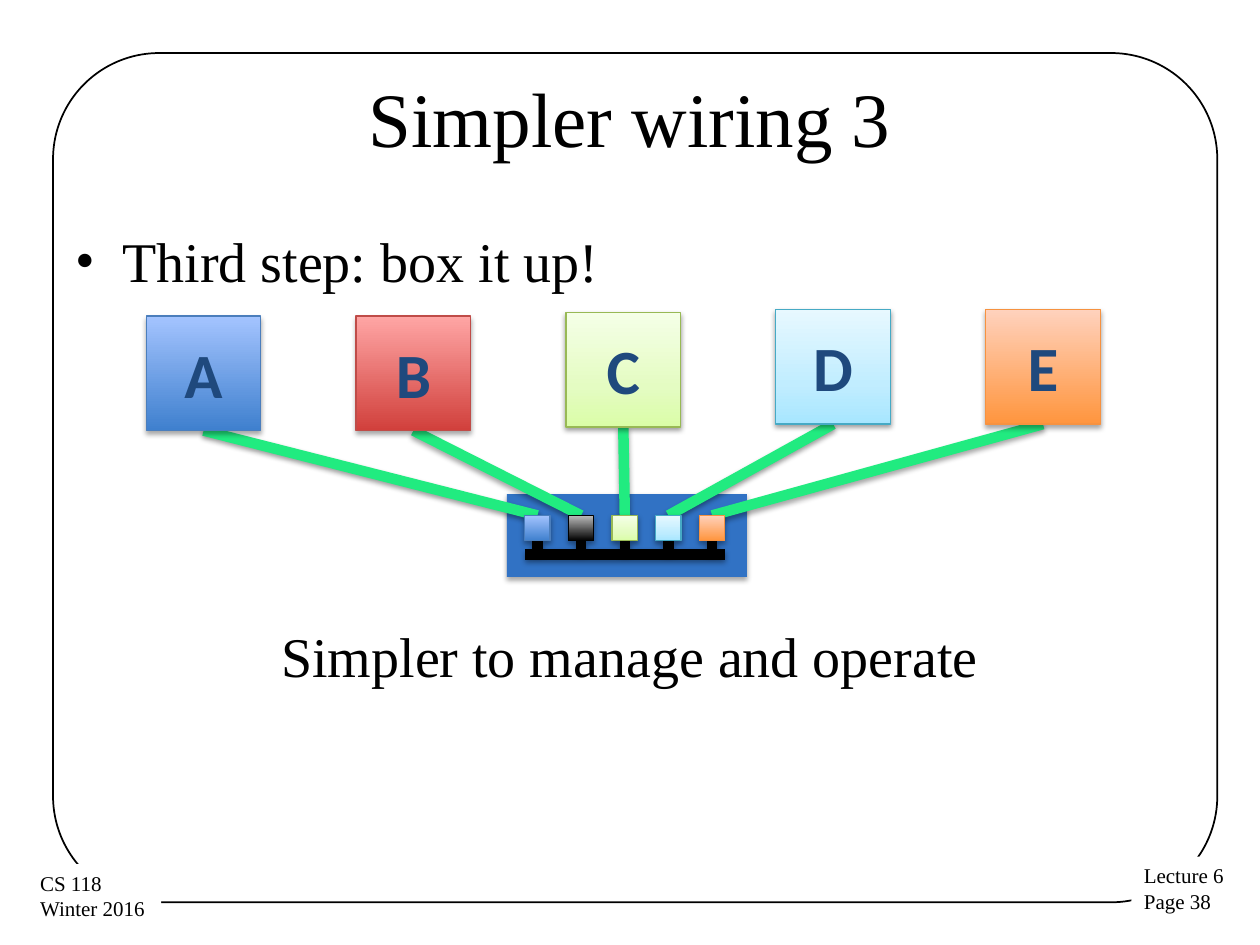
from lxml import etree
from pptx import Presentation
from pptx.dml.color import RGBColor
from pptx.enum.shapes import MSO_CONNECTOR, MSO_SHAPE
from pptx.enum.text import MSO_ANCHOR, MSO_AUTO_SIZE, PP_ALIGN
from pptx.oxml.ns import qn
from pptx.util import Cm, Pt

RECT, ROUND = MSO_SHAPE.RECTANGLE, MSO_SHAPE.ROUNDED_RECTANGLE
STRAIGHT = MSO_CONNECTOR.STRAIGHT
LEFT, CENTER = PP_ALIGN.LEFT, PP_ALIGN.CENTER
TOP, MIDDLE = MSO_ANCHOR.TOP, MSO_ANCHOR.MIDDLE
FIT = MSO_AUTO_SIZE.SHAPE_TO_FIT_TEXT

SERIF, SANS = "Times New Roman", "Calibri"
BLACK, WHITE, NAVY, GREEN, BLUE = "000000", "FFFFFF", "1F497D", "21EB80", "3172C4"

# Shadow: opacity in percent, distance in points
DEEP, SOFT = (35, 1.8), (38, 1.6)

# Look of a host or port: gradient stops from the bottom up, line, shadow
SKY = ([(0, "3F80CE"), (100, "A4C4FF")], "4B7EBC", DEEP)
RED = ([(0, "D1403C"), (100, "FFA6A5")], "BF4C48", DEEP)
GREY = ([(0, BLACK), (100, "BDBDBD")], BLACK, DEEP)
LIME = ([(0, "DAFDA7"), (35, "E4FCC2"), (100, "F5FFE7")], "98B955", SOFT)
AQUA = ([(0, "A7E6FF"), (35, "C1EDFF"), (100, "E7F8FF")], "46AAC5", SOFT)
PEACH = ([(0, "FF953E"), (100, "FFD2BD")], "F69240", DEEP)

# Name, top in cm, host look, port look, cable shadow
HOSTS = [
    ("A", 6.37, SKY, SKY, SOFT),
    ("B", 6.37, RED, GREY, DEEP),
    ("C", 6.30, LIME, LIME, SOFT),
    ("D", 6.24, AQUA, AQUA, SOFT),
    ("E", 6.24, PEACH, PEACH, DEEP),
]
HOST_X, HOST_STEP, HOST_SIZE = 2.95, 4.23, 2.31
PORT_X, PORT_STEP, PORT_SIZE, PORT_Y = 10.58, 0.88, 0.51, 10.39
BAR_Y = 11.18


def rgb(code):
    return RGBColor.from_string(code)


def add_shadow(item, look):
    """Drop a blurred black shadow straight down, or none."""
    props = item._element.spPr
    for old in props.findall(qn("a:effectLst")):
        props.remove(old)
    effects = etree.SubElement(props, qn("a:effectLst"))
    if look:
        alpha, dist = look
        shade = etree.SubElement(effects, qn("a:outerShdw"), blurRad=str(Pt(3.1)),
                                 dist=str(Pt(dist)), dir="5400000", rotWithShape="0")
        color = etree.SubElement(shade, qn("a:srgbClr"), val=BLACK)
        etree.SubElement(color, qn("a:alpha"), val=str(alpha * 1000))


def add_box(slide, x, y, w, h, fill=None, line=None, width=0.75, shadow=None, kind=RECT):
    """Add a shape; fill is a colour, a list of gradient stops, or None."""
    box = slide.shapes.add_shape(kind, Cm(x), Cm(y), Cm(w), Cm(h))
    if isinstance(fill, list):
        box.fill.gradient()
        box.fill.gradient_angle = 90
        stops = box._element.spPr.find(".//" + qn("a:gsLst"))
        for old in list(stops):
            stops.remove(old)
        for pos, code in fill:
            stop = etree.SubElement(stops, qn("a:gs"), pos=str(pos * 1000))
            etree.SubElement(stop, qn("a:srgbClr"), val=code)
    elif fill:
        box.fill.solid()
        box.fill.fore_color.rgb = rgb(fill)
    else:
        box.fill.background()
    if line:
        box.line.color.rgb = rgb(line)
        box.line.width = Pt(width)
    else:
        box.line.fill.background()
    box.shadow.inherit = False
    add_shadow(box, shadow)
    return box


def add_wire(slide, x1, y1, x2, y2, color, shadow):
    wire = slide.shapes.add_connector(STRAIGHT, Cm(x1), Cm(y1), Cm(x2), Cm(y2))
    wire.line.color.rgb = rgb(color)
    wire.line.width = Pt(6)
    add_shadow(wire, shadow)
    return wire


def write(item, lines, size, align=LEFT, anchor=TOP, font=SERIF, color=BLACK, bold=False):
    """Put one run in each paragraph."""
    frame = item.text_frame
    frame.word_wrap = True
    frame.vertical_anchor = anchor
    for i, line in enumerate(lines):
        para = frame.add_paragraph() if i else frame.paragraphs[0]
        para.alignment = align
        run = para.add_run()
        run.text = line
        run.font.name, run.font.size, run.font.bold = font, Pt(size), bold
        run.font.color.rgb = rgb(color)
    return frame


def add_bullet(para):
    props = para._p.get_or_add_pPr()
    props.set("marL", str(Cm(0.95)))
    props.set("indent", str(Cm(-0.95)))
    etree.SubElement(props, qn("a:buFont"), typeface=SERIF)
    etree.SubElement(props, qn("a:buChar"), char="•")


def add_frame(slide):
    """Rounded border with the two corner notes over it."""
    border = add_box(slide, 1.07, 1.07, 23.47, 17.12, line=BLACK, width=1, kind=ROUND)
    border.adjustments[0] = 0.125
    notes = [
        (22.81, 17.27, 2.13, ["Lecture 6", "Page 38"]),
        (0.56, 17.42, 2.69, ["CS 118", "Winter 2016"]),
    ]
    for x, y, w, lines in notes:
        note = add_box(slide, x, y, w, 1.3, WHITE)
        frame = write(note, lines, 12)
        frame.word_wrap = False
        frame.auto_size = FIT


def add_words(slide):
    title = slide.shapes.title
    title.left, title.top, title.width, title.height = Cm(1.27), Cm(0.76), Cm(22.86), Cm(3.18)
    write(title, ["Simpler wiring 3"], 44, CENTER, MIDDLE)

    body = slide.shapes.add_textbox(Cm(1.27), Cm(4.45), Cm(22.86), Cm(12.57))
    frame = write(body, ["Third step: box it up!", "Simpler to manage and operate"], 32)
    step, gain = frame.paragraphs
    step.space_before = Pt(6.4)
    add_bullet(step)
    gain.alignment = CENTER
    gain.space_before = Pt(187)


def add_net(slide):
    """Hosts cabled to the ports of one hub."""
    add_box(slide, 10.22, 9.96, 4.84, 1.67, BLUE, shadow=DEEP)
    mids = [PORT_X + i * PORT_STEP + PORT_SIZE / 2 for i in range(len(HOSTS))]

    # Cables lie under their hosts
    cables, hosts = [], []
    for i, (name, top, look, _, shade) in enumerate(HOSTS):
        x = HOST_X + i * HOST_STEP
        cables.append(add_wire(slide, x + HOST_SIZE / 2, top + HOST_SIZE,
                               mids[i], PORT_Y, GREEN, shade))
        host = add_box(slide, x, top, HOST_SIZE, HOST_SIZE, *look[:2], shadow=look[2])
        write(host, [name], 36, CENTER, MIDDLE, SANS, NAVY, True)
        hosts.append(host)

    # Stubs and bus inside the hub
    stubs = [add_wire(slide, mid, BAR_Y, mid, PORT_Y + PORT_SIZE, BLACK, SOFT) for mid in mids]
    add_wire(slide, PORT_X, BAR_Y, mids[-1] + PORT_SIZE / 2, BAR_Y, BLACK, SOFT)

    # Ports, joined to cable and stub
    for i, (_, _, _, look, _) in enumerate(HOSTS):
        port = add_box(slide, mids[i] - PORT_SIZE / 2, PORT_Y, PORT_SIZE, PORT_SIZE,
                       *look[:2], shadow=look[2])
        cables[i].begin_connect(hosts[i], 2)
        cables[i].end_connect(port, 0)
        stubs[i].end_connect(port, 2)


def main():
    deck = Presentation()
    deck.slide_width, deck.slide_height = Cm(25.4), Cm(19.05)
    slide = deck.slides.add_slide(deck.slide_layouts[5])
    add_frame(slide)
    add_words(slide)
    add_net(slide)
    deck.save("out.pptx")


if __name__ == "__main__":
    main()
